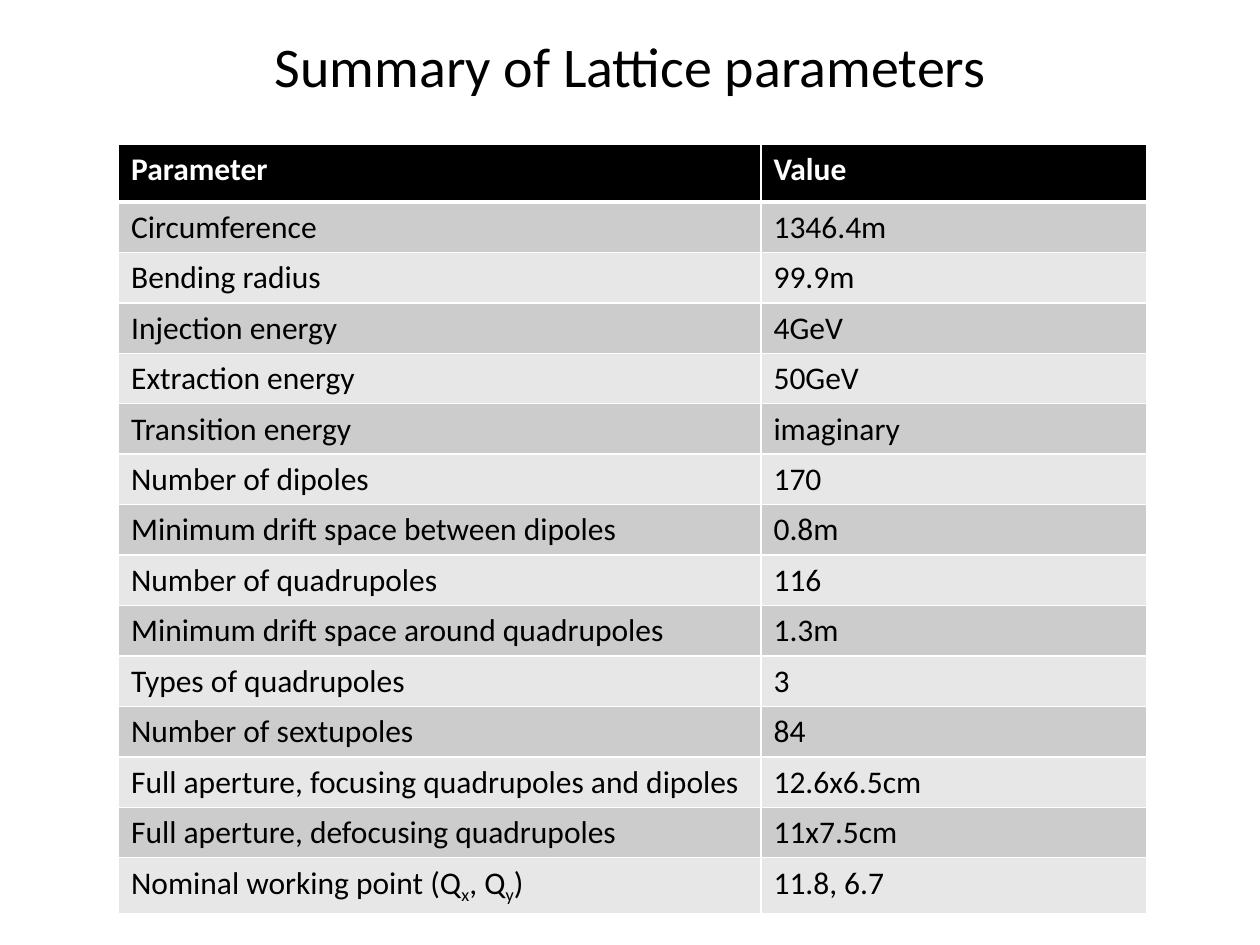
from lxml import etree
from pptx import Presentation
from pptx.dml.color import RGBColor
from pptx.enum.text import MSO_ANCHOR, PP_ALIGN
from pptx.oxml.ns import qn
from pptx.util import Cm, Pt

CENTER = PP_ALIGN.CENTER
MIDDLE = MSO_ANCHOR.MIDDLE

BLACK = RGBColor(0x00, 0x00, 0x00)
WHITE = RGBColor(0xFF, 0xFF, 0xFF)
DARK_BAND = RGBColor(0xCC, 0xCC, 0xCC)
LIGHT_BAND = RGBColor(0xE7, 0xE7, 0xE7)

TITLE = "Summary of Lattice parameters"
HEADER = ("Parameter", "Value")
SUBSCRIPT_MARK = "_"
PARAMETERS = [
    ("Circumference", "1346.4m"),
    ("Bending radius", "99.9m"),
    ("Injection energy", "4GeV"),
    ("Extraction energy", "50GeV"),
    ("Transition energy", "imaginary"),
    ("Number of dipoles", "170"),
    ("Minimum drift space between dipoles", "0.8m"),
    ("Number of quadrupoles", "116"),
    ("Minimum drift space around quadrupoles", "1.3m"),
    ("Types of quadrupoles", "3"),
    ("Number of sextupoles", "84"),
    ("Full aperture, focusing quadrupoles and dipoles", "12.6x6.5cm"),
    ("Full aperture, defocusing quadrupoles", "11x7.5cm"),
    ("Nominal working point (Q_x_, Q_y_)", "11.8, 6.7"),
]

TITLE_BOX = (0.71, 0.28, 24.0, 2.06)
TABLE_LEFT, TABLE_TOP = 2.39, 2.9
COLUMN_WIDTHS = (12.95, 7.77)
HEADER_HEIGHT, ROW_HEIGHT = 1.17, 0.99

TITLE_FORMAT = {"name": "Calibri", "size": Pt(32), "bold": False}
HEADER_FORMAT = {"name": "Calibri", "size": Pt(18), "bold": True}
BODY_FORMAT = {"name": "Calibri", "size": Pt(18), "bold": False}


def write_text(paragraph, text, font_format, color):
    for index, part in enumerate(text.split(SUBSCRIPT_MARK)):
        run = paragraph.add_run()
        run.text = part
        for name, value in font_format.items():
            setattr(run.font, name, value)
        run.font.color.rgb = color
        if index % 2:
            run.font._element.set("baseline", "-25000")


def set_borders(cell, widths):
    properties = cell._tc.get_or_add_tcPr()
    for position, (side, width) in enumerate(widths.items()):
        line = etree.Element(qn(f"a:{side}"), w=str(Pt(width)))
        fill = etree.SubElement(line, qn("a:solidFill"))
        etree.SubElement(fill, qn("a:srgbClr"), val=str(WHITE))
        properties.insert(position, line)


def add_title(slide):
    box = slide.shapes.add_textbox(*map(Cm, TITLE_BOX))
    frame = box.text_frame
    frame.word_wrap = True
    frame.vertical_anchor = MIDDLE
    paragraph = frame.paragraphs[0]
    paragraph.alignment = CENTER
    write_text(paragraph, TITLE, TITLE_FORMAT, BLACK)


def add_parameter_table(slide):
    rows = [HEADER, *PARAMETERS]
    heights = [HEADER_HEIGHT] + [ROW_HEIGHT] * len(PARAMETERS)
    table = slide.shapes.add_table(
        len(rows), len(HEADER), Cm(TABLE_LEFT), Cm(TABLE_TOP),
        Cm(sum(COLUMN_WIDTHS)), Cm(sum(heights)),
    ).table
    for column, width in zip(table.columns, COLUMN_WIDTHS):
        column.width = Cm(width)
    for row_index, (values, height) in enumerate(zip(rows, heights)):
        table.rows[row_index].height = Cm(height)
        if row_index == 0:
            font_format, color, fill = HEADER_FORMAT, WHITE, BLACK
        else:
            font_format, color = BODY_FORMAT, BLACK
            fill = DARK_BAND if row_index % 2 else LIGHT_BAND
        borders = {
            "lnL": 1,
            "lnR": 1,
            "lnT": 3 if row_index == 1 else 1,
            "lnB": 3 if row_index == 0 else 1,
        }
        for column_index, text in enumerate(values):
            cell = table.cell(row_index, column_index)
            cell.fill.solid()
            cell.fill.fore_color.rgb = fill
            set_borders(cell, borders)
            write_text(cell.text_frame.paragraphs[0], text, font_format, color)


def main():
    presentation = Presentation()
    presentation.slide_width = Cm(25.4)
    presentation.slide_height = Cm(19.05)
    slide = presentation.slides.add_slide(presentation.slide_layouts[6])
    add_title(slide)
    add_parameter_table(slide)
    presentation.save("out.pptx")


if __name__ == "__main__":
    main()
